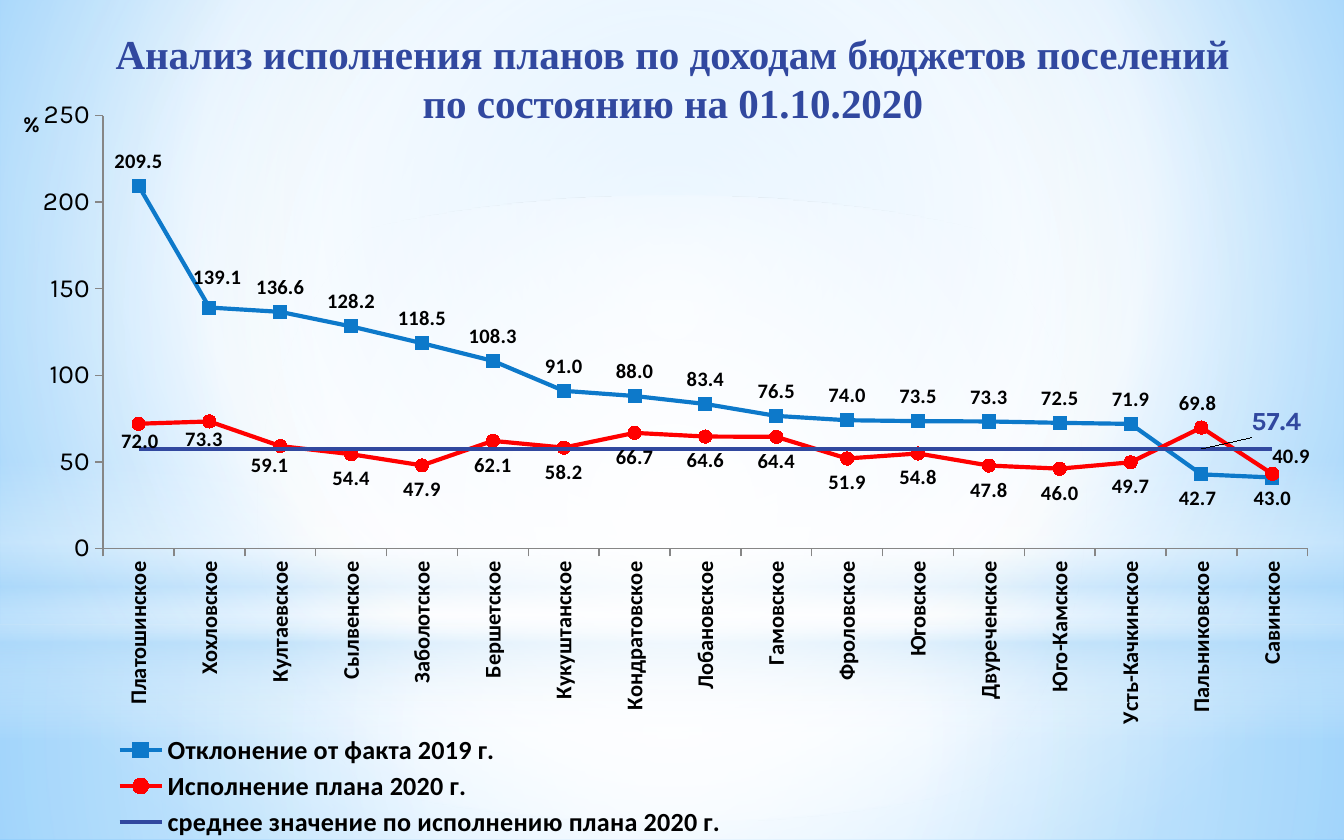
"""Build a slide with a line chart of budget revenue plan execution by settlement."""
from lxml import etree
from pptx import Presentation
from pptx.chart.data import CategoryChartData
from pptx.dml.color import RGBColor
from pptx.enum.chart import XL_CHART_TYPE, XL_LABEL_POSITION, XL_LEGEND_POSITION, XL_MARKER_STYLE, XL_TICK_MARK
from pptx.enum.shapes import MSO_SHAPE
from pptx.enum.text import MSO_ANCHOR, PP_ALIGN
from pptx.oxml.ns import qn
from pptx.util import Inches, Pt

RECT, OVAL = MSO_SHAPE.RECTANGLE, MSO_SHAPE.OVAL
ABOVE, BELOW = XL_LABEL_POSITION.ABOVE, XL_LABEL_POSITION.BELOW
SQUARE, CIRCLE, NO_MARKER = XL_MARKER_STYLE.SQUARE, XL_MARKER_STYLE.CIRCLE, XL_MARKER_STYLE.NONE

THEME = {
    "blue": RGBColor.from_string("0D79CA"),
    "red": RGBColor.from_string("FF0000"),
    "navy": RGBColor.from_string("31489F"),
    "axis": RGBColor.from_string("868686"),
    "black": RGBColor.from_string("000000"),
    "white": "FFFFFF", "haze": "B4DCFA", "sky": "9ED5FF", "deep": "5BB9FF",
    "title": Pt(22), "large": Pt(14), "small": Pt(12), "label": Pt(11), "line": Pt(2.25),
    "serif": "Times New Roman", "sans": "Calibri", "numeric": "Karla",
}
WHITE, HAZE = THEME["white"], THEME["haze"]
CENTRE = (50, 50, 50, 50)


def set_gradient(fill, element, stops, focus=None):
    fill.gradient()
    grad = element.find(".//" + qn("a:gradFill"))
    for child in list(grad):
        grad.remove(child)
    stop_list = etree.SubElement(grad, qn("a:gsLst"))
    for position, color, alpha in stops:
        stop = etree.SubElement(stop_list, qn("a:gs"), pos=str(position * 1000))
        clr = etree.SubElement(stop, qn("a:srgbClr"), val=color)
        etree.SubElement(clr, qn("a:alpha"), val=str(alpha * 1000))
    if focus:
        way = etree.SubElement(grad, qn("a:path"), path="circle")
        etree.SubElement(way, qn("a:fillToRect"), {k: str(v * 1000) for k, v in zip("ltrb", focus)})
    else:
        etree.SubElement(grad, qn("a:lin"), ang="5400000", scaled="0")


def set_layout(parent, index, **values):
    for old in parent.findall(qn("c:layout")):
        parent.remove(old)
    layout = etree.Element(qn("c:layout"))
    manual = etree.SubElement(layout, qn("c:manualLayout"))
    for name, value in values.items():
        etree.SubElement(manual, qn("c:" + name), val=str(value))
    parent.insert(index, layout)


prs = Presentation()
prs.slide_width, prs.slide_height = Inches(10), Inches(6.25)
s = prs.slides.add_slide(prs.slide_layouts[6])
set_gradient(s.background.fill, s.element,
             [(0, THEME["sky"], 100), (60, WHITE, 100), (100, THEME["deep"], 100)], (20, 10, 20, 60))

BACKDROP = [
    (RECT, 4.65, 1.6, [(0, WHITE, 91), (37, WHITE, 76), (100, HAZE, 79)], CENTRE),
    (RECT, 0, 4.65, [(0, WHITE, 89), (48, WHITE, 62), (100, HAZE, 79)], CENTRE),
    (RECT, 3.43, 2.08, [(0, WHITE, 0), (29, WHITE, 30), (45, HAZE, 40), (55, WHITE, 26),
                        (65, HAZE, 60), (100, WHITE, 0)], None),
    (OVAL, 1.46, 4.65, [(0, WHITE, 100), (56, WHITE, 0)], CENTRE),
]
for kind, top, height, stops, focus in BACKDROP:
    sp = s.shapes.add_shape(kind, Inches(0), Inches(top), Inches(10), Inches(height))
    sp.shadow.inherit = False
    sp.line.fill.background()
    set_gradient(sp.fill, sp.element, stops, focus)

sp = s.shapes.add_textbox(Inches(0.2), Inches(0.13), Inches(9.61), Inches(0.89))
tf = sp.text_frame
tf.word_wrap = True
tf.vertical_anchor = MSO_ANCHOR.MIDDLE
tf.text = "Анализ исполнения планов по доходам бюджетов поселений\vпо состоянию на 01.10.2020"
p = tf.paragraphs[0]
p.alignment = PP_ALIGN.CENTER
for r in p.runs:
    for name, value in {"size": THEME["title"], "name": THEME["serif"], "bold": True}.items():
        setattr(r.font, name, value)
    r.font.color.rgb = THEME["navy"]

SETTLEMENTS = [
    "Платошинское", "Хохловское", "Култаевское", "Сылвенское", "Заболотское", "Бершетское",
    "Кукуштанское", "Кондратовское", "Лобановское", "Гамовское", "Фроловское", "Юговское",
    "Двуреченское", "Юго-Камское", "Усть-Качкинское", "Пальниковское", "Савинское",
]
SERIES = [
    {"name": "Отклонение от факта 2019 г.", "color": "blue", "marker": SQUARE, "pos": ABOVE,
     "values": [209.5, 139.1, 136.6, 128.2, 118.5, 108.3, 91, 88, 83.4, 76.5, 74, 73.5, 73.3,
                72.5, 71.9, 42.7, 40.9],
     "moved": {1: (ABOVE, 0.006, -0.008), 15: (BELOW, -0.003, 0), 16: (ABOVE, 0.014, 0.005)}},
    {"name": "Исполнение плана 2020 г.", "color": "red", "marker": CIRCLE, "pos": BELOW,
     "values": [72, 73.3, 59.1, 54.4, 47.9, 62.1, 58.2, 66.7, 64.6, 64.4, 51.9, 54.8, 47.8,
                46, 49.7, 69.8, 43],
     "moved": {0: (BELOW, 0.001, -0.009), 1: (BELOW, -0.004, -0.008),
               2: (BELOW, -0.008, -0.007), 15: (ABOVE, -0.003, 0)}},
    {"name": "среднее значение по исполнению плана 2020 г.", "color": "navy", "marker": NO_MARKER,
     "pos": None, "values": [57.4] * len(SETTLEMENTS), "moved": {15: (ABOVE, 0.056, -0.008)}},
]
data = CategoryChartData(number_format="#,##0.0")
data.categories = SETTLEMENTS
for row in SERIES:
    data.add_series(row["name"], row["values"])
chart = s.shapes.add_chart(XL_CHART_TYPE.LINE_MARKERS, Inches(0.04), Inches(0.64),
                           Inches(9.96), Inches(5.64), data).chart
chart.has_title = False
chart.font.name = THEME["numeric"]
chart.font.size = THEME["large"]
chart.font.color.rgb = THEME["black"]
plot = chart.plots[0]
plot.vary_by_categories = False
set_layout(chart.element.find(".//" + qn("c:plotArea")), 0, layoutTarget="inner", xMode="edge",
           yMode="edge", x=0.073, y=0.039, w=0.9, h=0.571)

cat_axis, val_axis = chart.category_axis, chart.value_axis
for axis in (cat_axis, val_axis):
    axis.has_major_gridlines = False
    axis.major_tick_mark = XL_TICK_MARK.OUTSIDE
    axis.format.line.color.rgb = THEME["axis"]
for name, value in {"minimum_scale": 0, "maximum_scale": 250, "major_unit": 50}.items():
    setattr(val_axis, name, value)
val_axis.tick_labels.number_format = "#,##0"
val_axis.tick_labels.number_format_is_linked = False
val_axis.tick_labels.font.size = THEME["large"]
tf = val_axis.axis_title.text_frame
tf.text = "%"
r = tf.paragraphs[0].runs[0]
for name, value in {"size": THEME["small"], "bold": True, "name": THEME["numeric"]}.items():
    setattr(r.font, name, value)
title = val_axis.axis_title._element
title.find(".//" + qn("a:bodyPr")).set("rot", "0")
set_layout(title, 1, xMode="edge", yMode="edge", x=0.01, y=0.025)

chart.has_legend = True
legend = chart.legend
legend.position = XL_LEGEND_POSITION.BOTTOM
legend.include_in_layout = False
set_layout(legend._element, 1, xMode="edge", yMode="edge", x=0.08, y=0.85, w=0.46, h=0.147)
for font, size in ((cat_axis.tick_labels.font, "small"), (legend.font, "large")):
    for name, value in {"size": THEME[size], "bold": True, "name": THEME["sans"]}.items():
        setattr(font, name, value)
cat_axis._element.find(".//" + qn("a:bodyPr")).set("rot", "-5400000")

for series, row in zip(plot.series, SERIES):
    color = THEME[row["color"]]
    series.smooth = False
    series.format.line.color.rgb = color
    series.format.line.width = THEME["line"]
    series.marker.style = row["marker"]
    if row["pos"] is not None:
        series.marker.size = 7
        series.marker.format.fill.solid()
        series.marker.format.fill.fore_color.rgb = color
        series.marker.format.line.color.rgb = color
    labels = series.data_labels
    labels.show_value = row["pos"] is not None
    labels.number_format = "#,##0.0"
    labels.number_format_is_linked = False
    if row["pos"] is not None:
        labels.position = row["pos"]
    look = {"size": THEME["label"], "bold": True, "name": THEME["sans"]}
    if row["pos"] is None:
        look = {"size": THEME["large"], "bold": True, "name": THEME["numeric"]}
    fonts = [labels.font]
    for index, (position, dx, dy) in row["moved"].items():
        label = series.points[index].data_label
        label.position = position
        fonts.append(label.font)
        node = next(n for n in series._element.iter(qn("c:dLbl"))
                    if n.find(qn("c:idx")).get("val") == str(index))
        set_layout(node, 1, x=dx, y=dy)
        node.insert(2, etree.Element(qn("c:numFmt"), formatCode="#,##0.0", sourceLinked="0"))
    for font in fonts:
        for name, value in look.items():
            setattr(font, name, value)
        font.color.rgb = THEME["black"] if row["pos"] is not None else color

prs.save("out.pptx")
